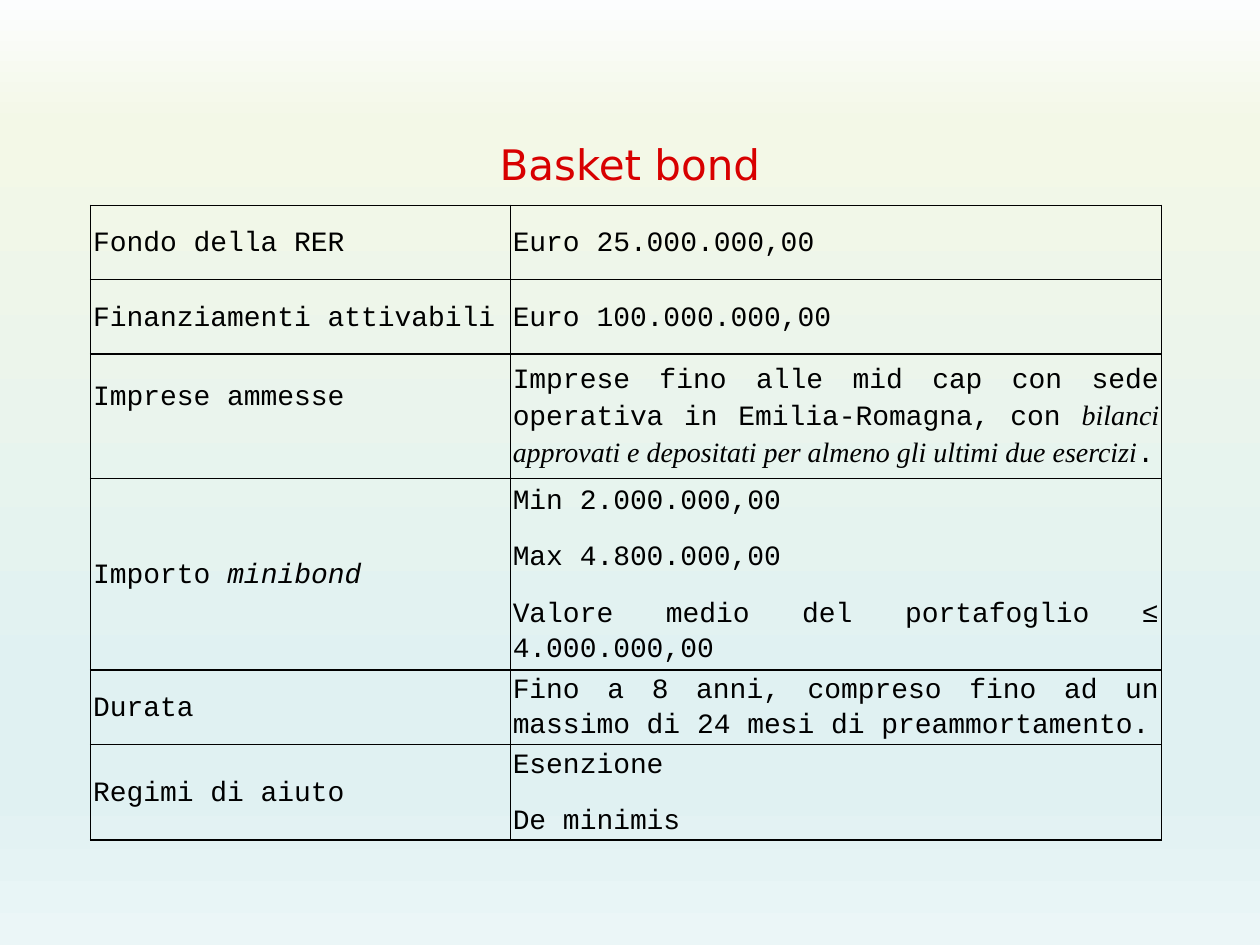
"""Build the basket bond summary slide."""
from dataclasses import dataclass

from lxml.etree import SubElement
from pptx import Presentation
from pptx.dml.color import RGBColor
from pptx.enum.text import MSO_ANCHOR, PP_ALIGN
from pptx.oxml.ns import qn
from pptx.util import Inches, Pt

BLACK = "000000"
BACKGROUND_STOPS = ((0, "FCFDFE"), (13, "F3F8E7"), (74, "E0F1F2"), (83, "E0F1F2"), (100, "EBF6F7"))
COLUMN_WIDTHS = (3.33, 5.17)


@dataclass(frozen=True)
class Span:
    text: str
    font: str = "Courier New"
    italic: bool = False


@dataclass(frozen=True)
class Row:
    height: float
    label: tuple[Span, ...]
    values: tuple[tuple[Span, ...], ...]
    label_bottom: float = 0


ROWS = (
    Row(0.59, (Span("Fondo della RER"),), ((Span("Euro 25.000.000,00"),),)),
    Row(0.59, (Span("Finanziamenti attivabili"),), ((Span("Euro 100.000.000,00"),),)),
    Row(
        0.99,
        (Span("Imprese ammesse"),),
        ((
            Span("Imprese fino alle mid cap con sede operativa in Emilia-Romagna, con "),
            Span(
                "bilanci approvati e depositati per almeno gli ultimi due esercizi",
                "Times New Roman",
                True,
            ),
            Span("."),
        ),),
        label_bottom=0.32,
    ),
    Row(
        1.51,
        (Span("Importo "), Span("minibond", italic=True)),
        (
            (Span("Min 2.000.000,00"),),
            (Span("Max 4.800.000,00"),),
            (Span("Valore medio del portafoglio ≤ 4.000.000,00"),),
        ),
    ),
    Row(
        0.59,
        (Span("Durata"),),
        ((Span("Fino a 8 anni, compreso fino ad un massimo di 24 mesi di preammortamento."),),),
    ),
    Row(0.75, (Span("Regimi di aiuto"),), ((Span("Esenzione"),), (Span("De minimis"),))),
)


def to_color(value: str) -> RGBColor:
    """Turn a hex string into a colour."""
    return RGBColor.from_string(value)


def add_text(paragraph, text: str, *, font: str, size: float = 16,
             color: str = BLACK, italic: bool = False) -> None:
    """Append a formatted run to a paragraph."""
    run = paragraph.add_run()
    run.text = text
    run.font.name = font
    run.font.size = Pt(size)
    run.font.italic = italic
    run.font.color.rgb = to_color(color)


def set_background(slide) -> None:
    """Give the slide its vertical gradient."""
    fill = slide.background.fill
    fill.gradient()
    fill.gradient_angle = 270
    stops = slide.element.find(".//" + qn("a:gsLst"))
    for stop in list(stops):
        stops.remove(stop)
    for position, color in BACKGROUND_STOPS:
        stop = SubElement(stops, qn("a:gs"), pos=str(position * 1000))
        SubElement(stop, qn("a:srgbClr"), val=color)


def add_title(slide) -> None:
    """Add the centred red heading."""
    box = slide.shapes.add_textbox(Inches(0.75), Inches(0.67), Inches(8.5), Inches(1.25))
    frame = box.text_frame
    frame.word_wrap = True
    frame.vertical_anchor = MSO_ANCHOR.MIDDLE
    paragraph = frame.paragraphs[0]
    paragraph.alignment = PP_ALIGN.CENTER
    add_text(paragraph, "Basket bond", font="DejaVu Sans", size=24, color="D80000")


def set_borders(cell) -> None:
    """Draw a thin black line on each side of a cell."""
    properties = cell._tc.get_or_add_tcPr()
    for position, side in enumerate(("lnL", "lnR", "lnT", "lnB")):
        line = properties.makeelement(qn(f"a:{side}"), {"w": str(Pt(1))})
        properties.insert(position, line)
        SubElement(SubElement(line, qn("a:solidFill")), qn("a:srgbClr"), val=BLACK)


def fill_cell(cell, paragraphs: tuple[tuple[Span, ...], ...], bottom: float = 0) -> None:
    """Write justified paragraphs into a transparent, bordered cell."""
    cell.fill.background()
    set_borders(cell)
    cell.vertical_anchor = MSO_ANCHOR.MIDDLE
    cell.margin_left = cell.margin_right = Inches(0.02)
    cell.margin_top = Inches(0)
    cell.margin_bottom = Inches(bottom)
    frame = cell.text_frame
    for index, spans in enumerate(paragraphs):
        paragraph = frame.add_paragraph() if index else frame.paragraphs[0]
        paragraph.alignment = PP_ALIGN.JUSTIFY
        paragraph.line_spacing = 1.11
        paragraph.space_before = paragraph.space_after = Pt(6)
        for span in spans:
            add_text(paragraph, span.text, font=span.font, italic=span.italic)


def add_conditions_table(slide) -> None:
    """Add the two-column table of fund conditions."""
    height = sum(row.height for row in ROWS)
    table = slide.shapes.add_table(
        len(ROWS), len(COLUMN_WIDTHS), Inches(0.72), Inches(1.63),
        Inches(sum(COLUMN_WIDTHS)), Inches(height),
    ).table
    table.first_row = table.horz_banding = False
    for column, width in zip(table.columns, COLUMN_WIDTHS):
        column.width = Inches(width)
    for index, row in enumerate(ROWS):
        table.rows[index].height = Inches(row.height)
        fill_cell(table.cell(index, 0), (row.label,), row.label_bottom)
        fill_cell(table.cell(index, 1), row.values)


def main() -> None:
    """Build and save the presentation."""
    presentation = Presentation()
    presentation.slide_width = Inches(10)
    presentation.slide_height = Inches(7.5)
    slide = presentation.slides.add_slide(presentation.slide_layouts[6])
    set_background(slide)
    add_title(slide)
    add_conditions_table(slide)
    presentation.save("out.pptx")


if __name__ == "__main__":
    main()
